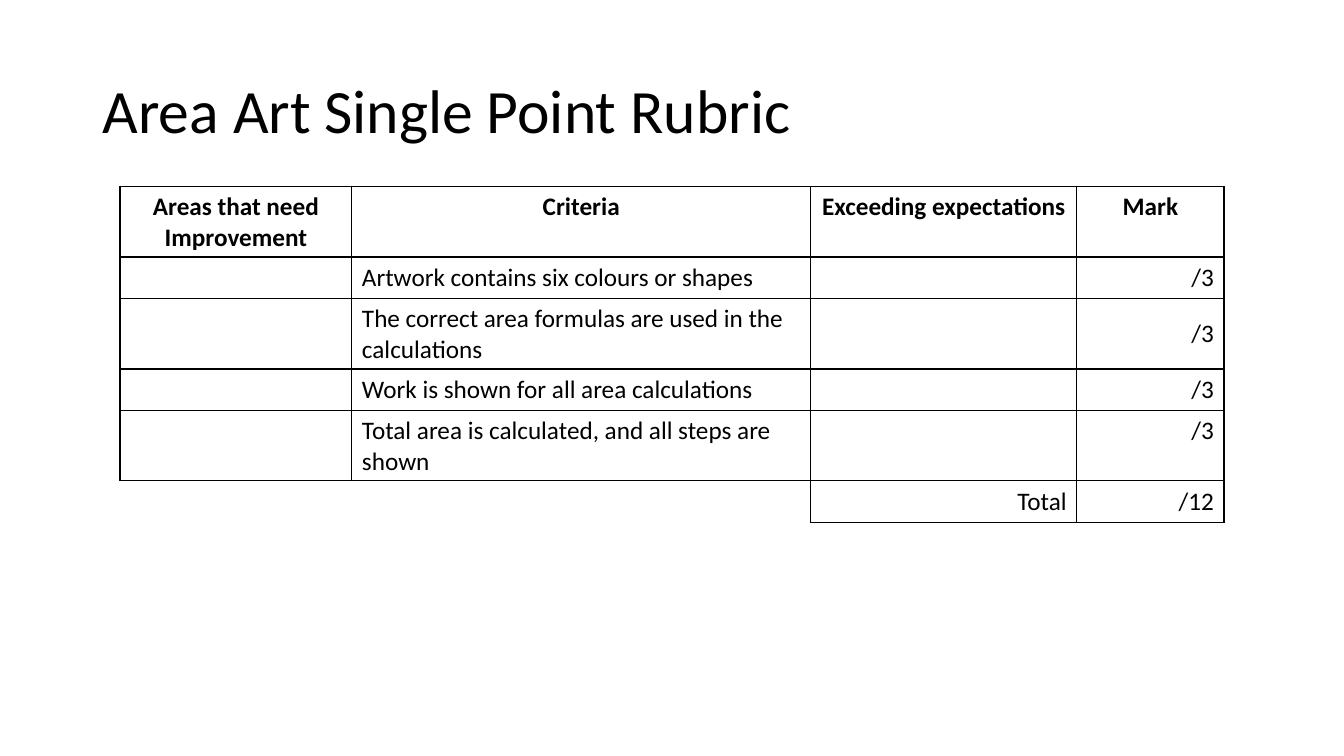
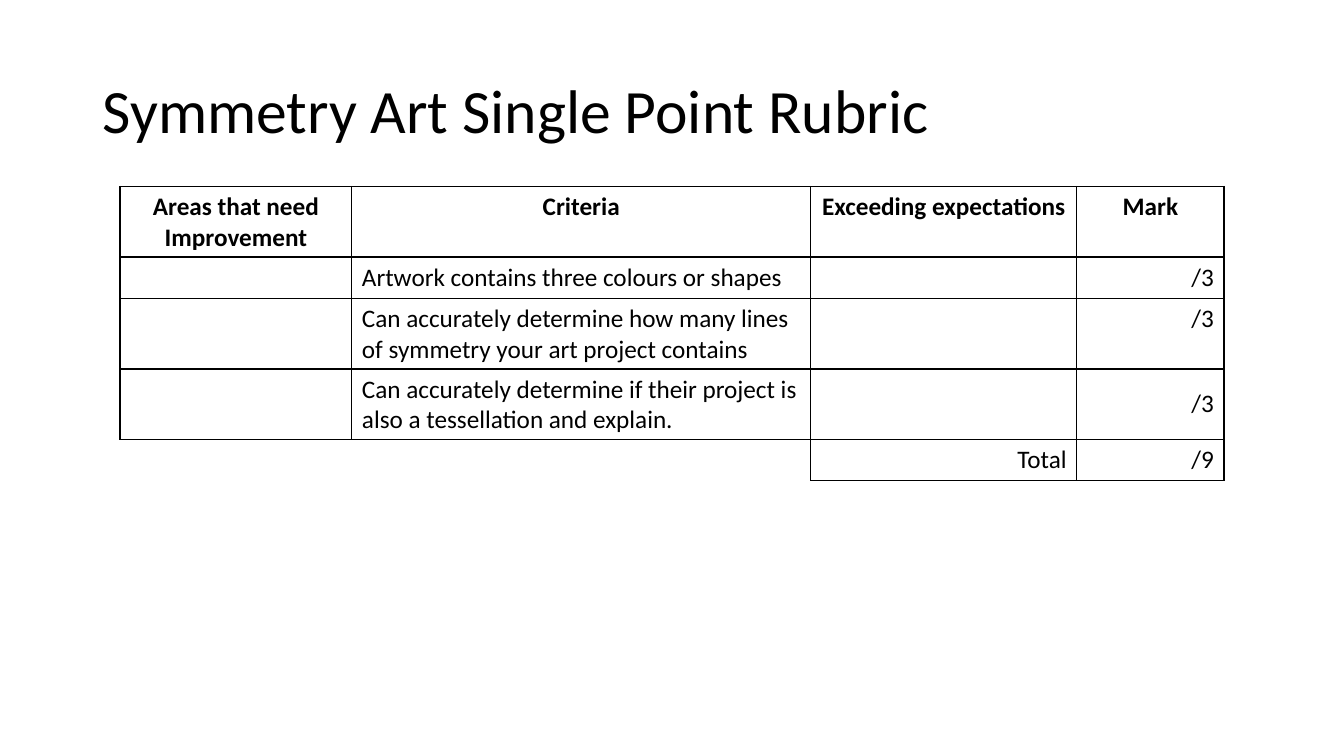
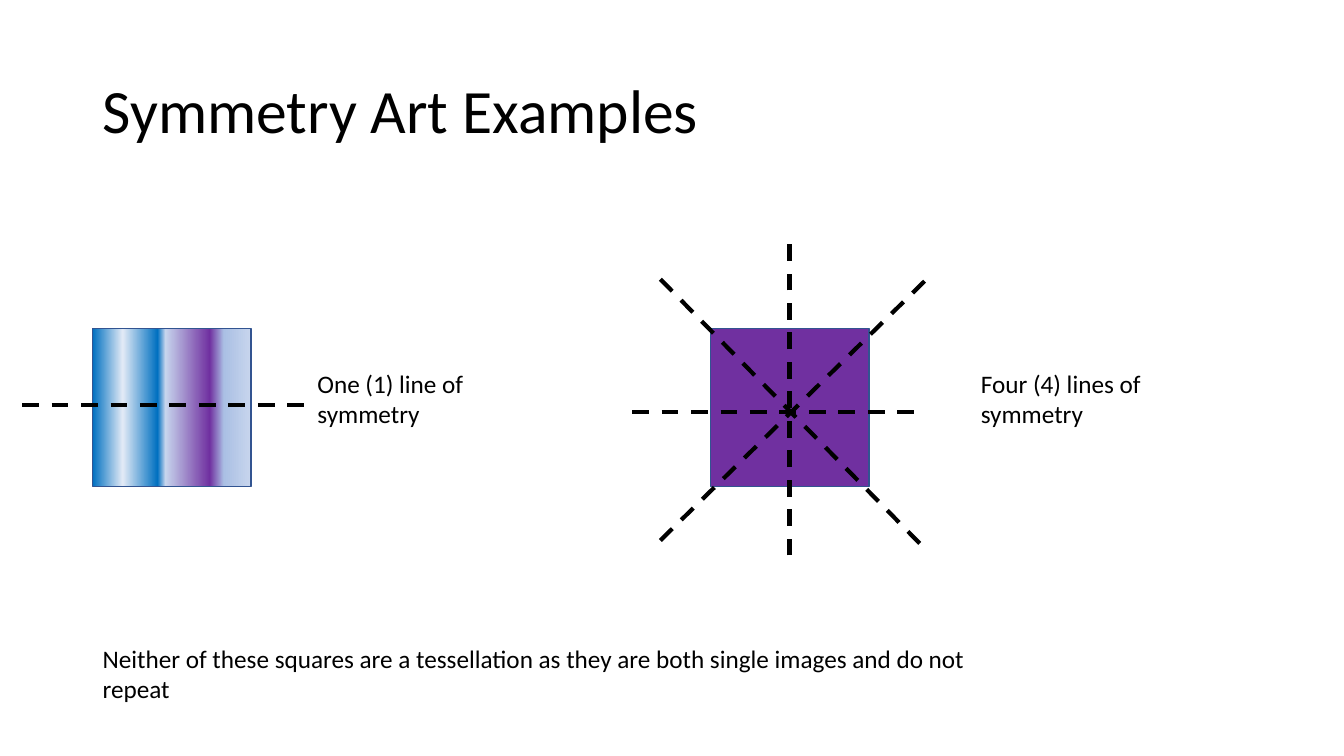
from lxml import etree
from pptx import Presentation
from pptx.dml.color import RGBColor
from pptx.enum.dml import MSO_LINE
from pptx.enum.shapes import MSO_CONNECTOR, MSO_SHAPE
from pptx.enum.text import MSO_ANCHOR as ANCHOR, PP_ALIGN as ALIGN
from pptx.oxml import parse_xml
from pptx.oxml.ns import nsdecls, qn
from pptx.util import Inches, Pt

FONT, BLACK, PURPLE, OUTLINE = "Calibri", "000000", "7030A0", "325491"
HEADERS = ["Areas that need Improvement", "Criteria", "Exceeding expectations", "Mark"]
COLUMNS = [2.3, 4.55, 2.64, 1.46]
ROW_HEIGHT = 0.41

RUBRICS = [
    ("Area Art Single Point Rubric", [
        ("Artwork contains six colours or shapes", ANCHOR.MIDDLE),
        ("The correct area formulas are used in the calculations", ANCHOR.MIDDLE),
        ("Work is shown for all area calculations", ANCHOR.MIDDLE),
        ("Total area is calculated, and all steps are shown", ANCHOR.TOP),
    ], "/12"),
    ("Symmetry Art Single Point Rubric", [
        ("Artwork contains three colours or shapes", ANCHOR.MIDDLE),
        ("Can accurately determine how many lines of symmetry your art project contains",
         ANCHOR.TOP),
        ("Can accurately determine if their project is also a tessellation and explain.",
         ANCHOR.MIDDLE),
    ], "/9"),
]

STRIPES = [(0, "0070C0"), (19, "E3EAF6"), (41, "0070C0"), (46, "C7D5ED"),
           (74, PURPLE), (83, "ABC0E4"), (100, "C7D5ED")]
SQUARE_TOP, SQUARE_SIZE = 3.26, 1.57
STRIPED_LEFT, PURPLE_LEFT = 0.92, 7.05
NOTES = [
    (3.05, 3.6, 2.57, "One (1) line of symmetry"),
    (9.63, 3.6, 2.57, "Four (4) lines of symmetry"),
    (0.92, 6.33, 9.22, "Neither of these squares are a tessellation as they are both "
                       "single images and do not repeat"),
]
SYMMETRY_LINES = [
    (0.22, 4.02, 3.1, 4.02),
    (6.27, 4.09, 9.18, 4.09),
    (7.83, 5.51, 7.83, 2.35),
    (6.55, 2.77, 9.16, 5.43),
    (9.17, 2.79, 6.5, 5.41),
]


def rgb(value):
    return RGBColor.from_string(value)


def write(tf, text, size=18, bold=False, align=ALIGN.LEFT):
    tf.text = text
    p = tf.paragraphs[0]
    p.alignment = align
    p.font.size = Pt(size)
    for r in p.runs:
        r.font.name, r.font.size, r.font.bold = FONT, Pt(size), bold
        r.font.color.rgb = rgb(BLACK)
    return p


def add_text(s, left, top, width, height, text, size=18):
    tf = s.shapes.add_textbox(*map(Inches, (left, top, width, height))).text_frame
    tf.word_wrap = True
    write(tf, text, size)
    return tf


def add_slide(prs, title):
    s = prs.slides.add_slide(prs.slide_layouts[6])
    tf = add_text(s, 0.92, 0.4, 11.5, 1.45, title, 44)
    tf.vertical_anchor = ANCHOR.MIDDLE
    tf.paragraphs[0].line_spacing = 0.9
    return s


def set_borders(cell, visible):
    tcPr = cell._tc.get_or_add_tcPr()
    for i, side in enumerate("LRTB"):
        paint = (f'<a:solidFill><a:srgbClr val="{BLACK}"/></a:solidFill>'
                 if side in visible else "<a:noFill/>")
        tcPr.insert(i, parse_xml(f'<a:ln{side} {nsdecls("a")} w="{Pt(1)}">{paint}</a:ln{side}>'))


def add_rubric(s, criteria, total):
    rows = [HEADERS]
    rows += [["", text, "", "/3"] for text, _ in criteria]
    rows += [["", "", "Total", total]]
    anchors = [ANCHOR.TOP] + [anchor for _, anchor in criteria] + [ANCHOR.MIDDLE]
    last = len(rows) - 1
    table = s.shapes.add_table(len(rows), len(COLUMNS), Inches(1.19), Inches(1.85),
                               Inches(sum(COLUMNS)), Inches(ROW_HEIGHT * len(rows))).table
    table.first_row = table.horz_banding = False
    for column, width in zip(table.columns, COLUMNS):
        column.width = Inches(width)
    for i, row in enumerate(rows):
        table.rows[i].height = Inches(ROW_HEIGHT)
        for j, text in enumerate(row):
            cell = table.cell(i, j)
            if i == 0:
                align = ALIGN.CENTER
            else:
                align = ALIGN.RIGHT if j > 1 else ALIGN.LEFT
            write(cell.text_frame, text, bold=i == 0, align=align)
            cell.vertical_anchor = anchors[i] if j > 1 else ANCHOR.TOP
            cell.fill.background()
            set_borders(cell, ("T", "TR")[j] if i == last and j < 2 else "LRTB")


def add_square(s, left):
    sp = s.shapes.add_shape(MSO_SHAPE.RECTANGLE, Inches(left), Inches(SQUARE_TOP),
                            Inches(SQUARE_SIZE), Inches(SQUARE_SIZE))
    sp.shadow.inherit = False
    sp.line.color.rgb = rgb(OUTLINE)
    sp.line.width = Pt(1)
    return sp


def fill_stripes(sp):
    sp.fill.gradient()
    sp.fill.gradient_angle = 0
    stops = sp._element.spPr.find(qn("a:gradFill")).find(qn("a:gsLst"))
    for stop in list(stops):
        stops.remove(stop)
    for position, color in STRIPES:
        stop = etree.SubElement(stops, qn("a:gs"), pos=str(position * 1000))
        etree.SubElement(stop, qn("a:srgbClr"), val=color)


def add_symmetry_line(s, ends):
    line = s.shapes.add_connector(MSO_CONNECTOR.STRAIGHT, *map(Inches, ends))
    line.line.color.rgb = rgb(BLACK)
    line.line.width = Pt(3)
    line.line.dash_style = MSO_LINE.DASH
    etree.SubElement(line._element.spPr, qn("a:effectLst"))


def main():
    prs = Presentation()
    prs.slide_width, prs.slide_height = Inches(13.33), Inches(7.5)
    for title, criteria, total in RUBRICS:
        add_rubric(add_slide(prs, title), criteria, total)

    s = add_slide(prs, "Symmetry Art Examples")
    fill_stripes(add_square(s, STRIPED_LEFT))
    purple = add_square(s, PURPLE_LEFT)
    purple.fill.solid()
    purple.fill.fore_color.rgb = rgb(PURPLE)
    for left, top, width, text in NOTES:
        add_text(s, left, top, width, 0.71, text)
    for ends in SYMMETRY_LINES:
        add_symmetry_line(s, ends)
    prs.save("out.pptx")


if __name__ == "__main__":
    main()
